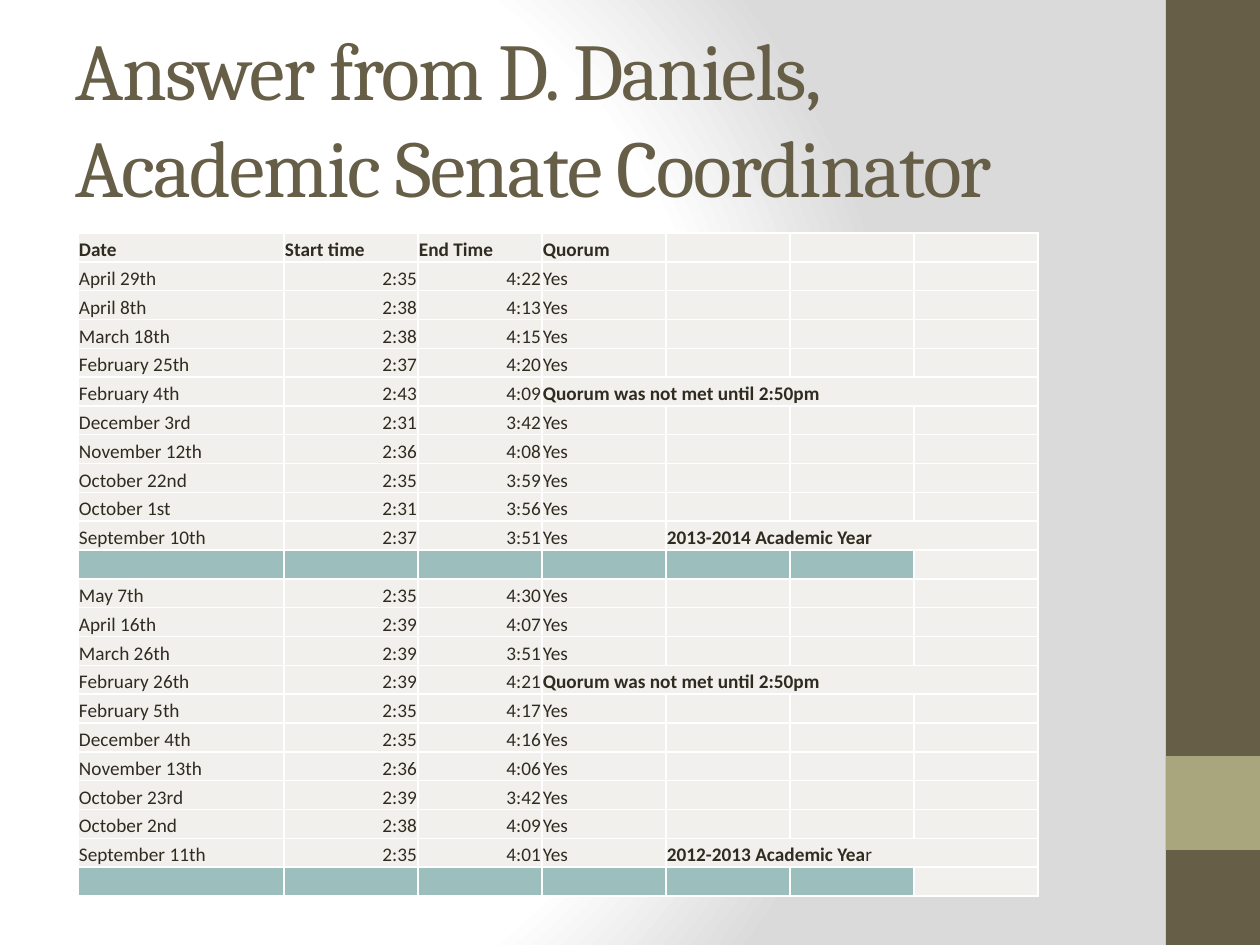
from dataclasses import dataclass

from lxml.etree import SubElement
from pptx import Presentation
from pptx.dml.color import RGBColor
from pptx.enum.shapes import MSO_SHAPE as Shape
from pptx.enum.text import MSO_ANCHOR as Anchor, MSO_AUTO_SIZE as AutoSize, PP_ALIGN as Align
from pptx.oxml import parse_xml
from pptx.oxml.ns import nsdecls, qn
from pptx.util import Emu, Pt

PX_PER_INCH = 126
BROWN, OLIVE, INK = "675E47", "A9A57C", "2F2B20"
PALE, TEAL, WHITE, GREY = "F1F0EC", "9CBEBD", "FFFFFF", "DADADA"
NOT_MET = "Quorum was not met until 2:50pm"
COLUMN_WIDTHS = [206, 134] + [124] * 5
TABLE_HEIGHT = 664
QUORUM_COLUMN, YEAR_COLUMN, LAST_COLUMN = 3, 4, 6


@dataclass
class Meeting:
    date: str
    start: str
    end: str
    quorum: str = "Yes"
    year: str = ""
    year_tail: str = ""


@dataclass
class Panel:
    top: int
    height: int
    color: str


YEARS = [
    [
        Meeting("April 29th", "2:35", "4:22"),
        Meeting("April 8th", "2:38", "4:13"),
        Meeting("March 18th", "2:38", "4:15"),
        Meeting("February 25th", "2:37", "4:20"),
        Meeting("February 4th", "2:43", "4:09", NOT_MET),
        Meeting("December 3rd", "2:31", "3:42"),
        Meeting("November 12th", "2:36", "4:08"),
        Meeting("October 22nd", "2:35", "3:59"),
        Meeting("October 1st", "2:31", "3:56"),
        Meeting("September 10th", "2:37", "3:51", year="2013-2014 Academic Year"),
    ],
    [
        Meeting("May 7th", "2:35", "4:30"),
        Meeting("April 16th", "2:39", "4:07"),
        Meeting("March 26th", "2:39", "3:51"),
        Meeting("February 26th", "2:39", "4:21", NOT_MET),
        Meeting("February 5th", "2:35", "4:17"),
        Meeting("December 4th", "2:35", "4:16"),
        Meeting("November 13th", "2:36", "4:06"),
        Meeting("October 23rd", "2:39", "3:42"),
        Meeting("October 2nd", "2:38", "4:09"),
        Meeting("September 11th", "2:35", "4:01", year="2012-2013 Academic Yea", year_tail="r"),
    ],
]
PANELS = [Panel(0, 945, BROWN), Panel(756, 94, OLIVE)]


def px(length: int) -> Emu:
    return Emu(round(length * 914400 / PX_PER_INCH))


def rgb(color: str) -> RGBColor:
    return RGBColor.from_string(color)


def paint_background(slide) -> None:
    slide.background.fill.gradient()
    gradient = slide.background._cSld.find(".//" + qn("a:gradFill"))
    stops = "".join(
        f'<a:gs pos="{percent * 1000}"><a:srgbClr val="{color}"/></a:gs>'
        for percent, color in [(0, WHITE), (75, WHITE), (100, GREY)]
    )
    gradient.getparent().replace(gradient, parse_xml(
        f'<a:gradFill {nsdecls("a")} rotWithShape="1"><a:gsLst>{stops}</a:gsLst>'
        '<a:path path="circle"><a:fillToRect l="20000" t="50000" r="100000" b="50000"/>'
        "</a:path></a:gradFill>"
    ))


def draw_panel(slide, panel: Panel) -> None:
    bar = slide.shapes.add_shape(Shape.RECTANGLE, px(1166), px(panel.top), px(94), px(panel.height))
    bar.shadow.inherit = False
    bar.fill.solid()
    bar.fill.fore_color.rgb = rgb(panel.color)
    bar.line.fill.background()


def write_title(slide, text: str) -> None:
    title = slide.shapes.title
    title.left, title.top, title.width, title.height = px(63), px(38), px(1050), px(158)
    frame = title.text_frame
    frame.text = text
    frame.word_wrap = True
    frame.auto_size = AutoSize.NONE
    frame.vertical_anchor = Anchor.MIDDLE
    heading = frame.paragraphs[0]
    heading.alignment = Align.LEFT
    heading.font.name = "Cambria"
    heading.font.size = Pt(46)
    heading.font.color.rgb = rgb(BROWN)
    heading._p.pPr.find(qn("a:defRPr")).set("spc", "-100")


def style_cell(cell, color: str) -> None:
    properties = cell._tc.get_or_add_tcPr()
    for side in ("lnL", "lnR", "lnT", "lnB"):
        border = SubElement(properties, qn(f"a:{side}"), w=str(Pt(1)))
        SubElement(SubElement(border, qn("a:solidFill")), qn("a:srgbClr"), val=WHITE)
    cell.fill.solid()
    cell.fill.fore_color.rgb = rgb(color)
    cell.margin_left = cell.margin_top = cell.margin_right = px(1)
    cell.margin_bottom = 0
    cell.vertical_anchor = Anchor.BOTTOM
    SubElement(cell.text_frame.paragraphs[0]._p, qn("a:endParaRPr"), sz="1100")


def write_cell(cell, text: str, bold: bool = False, align: Align = Align.LEFT, tail: str = "") -> None:
    entry = cell.text_frame.paragraphs[0]
    entry.alignment = align
    entry.font.name = "Calibri"
    entry.font.size = Pt(11)
    entry.font.color.rgb = rgb(INK)
    for part, weight in [(text, bold), (tail, False)]:
        if part:
            run = entry.add_run()
            run.text = part
            run.font.bold = weight


def write_meeting(table, row: int, meeting: Meeting) -> None:
    write_cell(table.cell(row, 0), meeting.date)
    write_cell(table.cell(row, 1), meeting.start, align=Align.RIGHT)
    write_cell(table.cell(row, 2), meeting.end, align=Align.RIGHT)
    quorum = table.cell(row, QUORUM_COLUMN)
    not_met = meeting.quorum == NOT_MET
    write_cell(quorum, meeting.quorum, bold=not_met)
    if not_met:
        quorum.merge(table.cell(row, LAST_COLUMN))
    if meeting.year:
        year = table.cell(row, YEAR_COLUMN)
        write_cell(year, meeting.year, bold=True, tail=meeting.year_tail)
        year.merge(table.cell(row, LAST_COLUMN))


def draw_meetings(slide) -> None:
    records = [record for year in YEARS for record in [*year, None]]
    row_count = len(records) + 1
    table = slide.shapes.add_table(
        row_count, len(COLUMN_WIDTHS), px(78), px(233), px(sum(COLUMN_WIDTHS)), px(TABLE_HEIGHT)
    ).table
    table.first_row = table.horz_banding = False
    for column, width in zip(table.columns, COLUMN_WIDTHS):
        column.width = px(width)
    for row, record in enumerate([*YEARS[0][:1], *records]):
        table.rows[row].height = px(TABLE_HEIGHT) // row_count
        for column in range(len(COLUMN_WIDTHS)):
            divider = record is None and column < LAST_COLUMN
            style_cell(table.cell(row, column), TEAL if divider else PALE)
    for column, heading in enumerate(["Date", "Start time", "End Time", "Quorum"]):
        write_cell(table.cell(0, column), heading, bold=True)
    for row, record in enumerate(records, start=1):
        if record:
            write_meeting(table, row, record)


def main() -> None:
    deck = Presentation()
    deck.slide_width, deck.slide_height = px(1260), px(945)
    slide = deck.slides.add_slide(deck.slide_layouts[5])
    paint_background(slide)
    for panel in PANELS:
        draw_panel(slide, panel)
    write_title(slide, "Answer from D. Daniels, Academic Senate Coordinator")
    draw_meetings(slide)
    deck.save("out.pptx")


if __name__ == "__main__":
    main()
